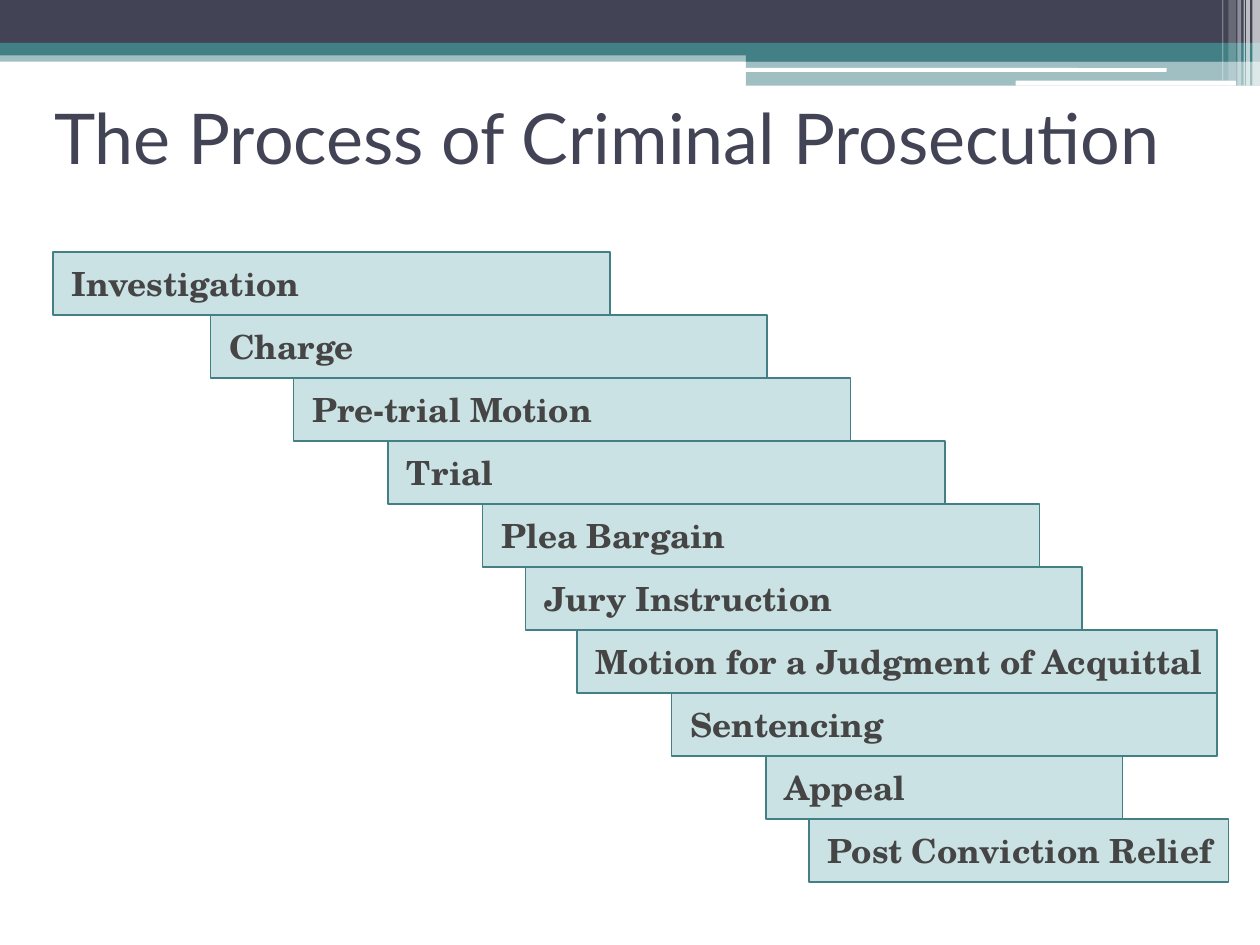
from lxml.etree import SubElement
from pptx import Presentation
from pptx.dml.color import RGBColor
from pptx.enum.shapes import MSO_SHAPE
from pptx.enum.text import MSO_ANCHOR, MSO_AUTO_SIZE, PP_ALIGN
from pptx.oxml.ns import qn
from pptx.util import Inches, Pt

COLORS = {
    "navy": "424456",
    "teal": "438086",
    "step": "328E97",
    "text": "454545",
    "white": "FFFFFF",
}

BANDS = [
    (0, 0.4, 10, 0.09, "teal", 50),
    (0, 0, 10, 0.34, "navy", 100),
    (0, 0.34, 10, 0.1, "teal", 100),
    (5.92, 0.39, 4.08, 0.1, "teal", 100),
    (5.92, 0.48, 4.08, 0.2, "teal", 50),
]
PILLS = [(5.91, 0.54, 3.35, 0.03), (8.06, 0.64, 1.75, 0.04)]
STRIPES = [
    (9.94, 0.06, 0.68, 65),
    (9.89, 0.03, 0.68, 65),
    (9.87, 0.01, 0.68, 60),
    (9.82, 0.03, 0.68, 40),
    (9.75, 0.06, 0.64, 20),
    (9.7, 0.01, 0.64, 30),
]
STEPS = [
    ("Investigation", 0.42, 4.42),
    ("Charge", 1.67, 4.42),
    ("Pre-trial Motion", 2.33, 4.42),
    ("Trial", 3.08, 4.42),
    ("Plea Bargain", 3.83, 4.42),
    ("Jury Instruction", 4.17, 4.42),
    ("Motion for a Judgment of Acquittal", 4.58, 5.08),
    ("Sentencing", 5.33, 4.33),
    ("Appeal", 6.08, 2.83),
    ("Post Conviction Relief", 6.42, 3.33),
]


def place(shape, left, top, width, height):
    """Move and size a shape, given inches."""
    shape.left, shape.top = Inches(left), Inches(top)
    shape.width, shape.height = Inches(width), Inches(height)


def bring_to_front(shape):
    """Move a shape to the end of the drawing order."""
    shape.element.getparent().append(shape.element)


def paint(shape, color, opacity=100):
    """Fill a shape with a colour at an opacity in percent."""
    shape.fill.solid()
    shape.fill.fore_color.rgb = RGBColor.from_string(COLORS[color])
    if opacity < 100:
        color_element = shape.element.spPr.find(qn("a:solidFill"))[0]
        SubElement(color_element, qn("a:alpha"), val=str(opacity * 1000))


def write(shape, text, *, size, font, color, bold=False, space_before=0, indent=0):
    """Write one left-aligned paragraph without a bullet, centred vertically."""
    frame = shape.text_frame
    frame.text = text
    frame.word_wrap = True
    frame.auto_size = MSO_AUTO_SIZE.NONE
    frame.vertical_anchor = MSO_ANCHOR.MIDDLE
    paragraph = frame.paragraphs[0]
    paragraph.alignment = PP_ALIGN.LEFT
    paragraph.space_before = Pt(space_before)
    properties = paragraph._p.get_or_add_pPr()
    properties.set("marL", str(Inches(indent)))
    properties.set("indent", "0")
    SubElement(properties, qn("a:buNone"))
    run_font = paragraph.runs[0].font
    run_font.size = Pt(size)
    run_font.name = font
    run_font.bold = bold
    run_font.color.rgb = RGBColor.from_string(COLORS[color])


def add_bar(slide, left, top, width, height, color, opacity=100, kind=MSO_SHAPE.RECTANGLE):
    """Add a plain bar without outline."""
    bar = slide.shapes.add_shape(
        kind, Inches(left), Inches(top), Inches(width), Inches(height)
    )
    bar.shadow.inherit = False
    bar.line.fill.background()
    paint(bar, color, opacity)


def add_header(slide, left, top):
    """Draw the bands, pills and stripes of the header."""
    for x, y, width, height, color, opacity in BANDS:
        add_bar(slide, left + x, top + y, width, height, color, opacity)
    for x, y, width, height in PILLS:
        add_bar(slide, left + x, top + y, width, height, "white",
                kind=MSO_SHAPE.ROUNDED_RECTANGLE)
    for x, width, height, opacity in STRIPES:
        add_bar(slide, left + x, top, width, height, "white", opacity)


def set_title(slide, left, top, width, height):
    """Place and write the slide title."""
    title = slide.shapes.title
    place(title, left, top, width, height)
    write(title, "The Process of Criminal Prosecution", size=40, font="Lato", color="navy")
    bring_to_front(title)


def add_steps(slide, top, height):
    """Build the staircase, with the first step in the body placeholder."""
    for index, (text, left, width) in enumerate(STEPS):
        box = (left, top + index * height, width, height)
        if index == 0:
            step = slide.placeholders[1]
            place(step, *box)
            bring_to_front(step)
        else:
            step = slide.shapes.add_shape(MSO_SHAPE.RECTANGLE, *map(Inches, box))
        step.shadow.inherit = False
        paint(step, "step", 25)
        step.line.color.rgb = RGBColor.from_string(COLORS["teal"])
        step.line.width = Pt(1)
        write(step, text, size=19, font="TeX Gyre Schola", color="text", bold=True,
              space_before=3, indent=0.05)


def main():
    """Build and save the presentation."""
    presentation = Presentation()
    presentation.slide_width = Inches(10)
    presentation.slide_height = Inches(7.5)
    slide = presentation.slides.add_slide(presentation.slide_layouts[1])
    add_header(slide, 0, 0)
    set_title(slide, 0.33, 0.5, 9.17, 1.17)
    add_steps(slide, 2, 0.5)
    presentation.save("out.pptx")


if __name__ == "__main__":
    main()
